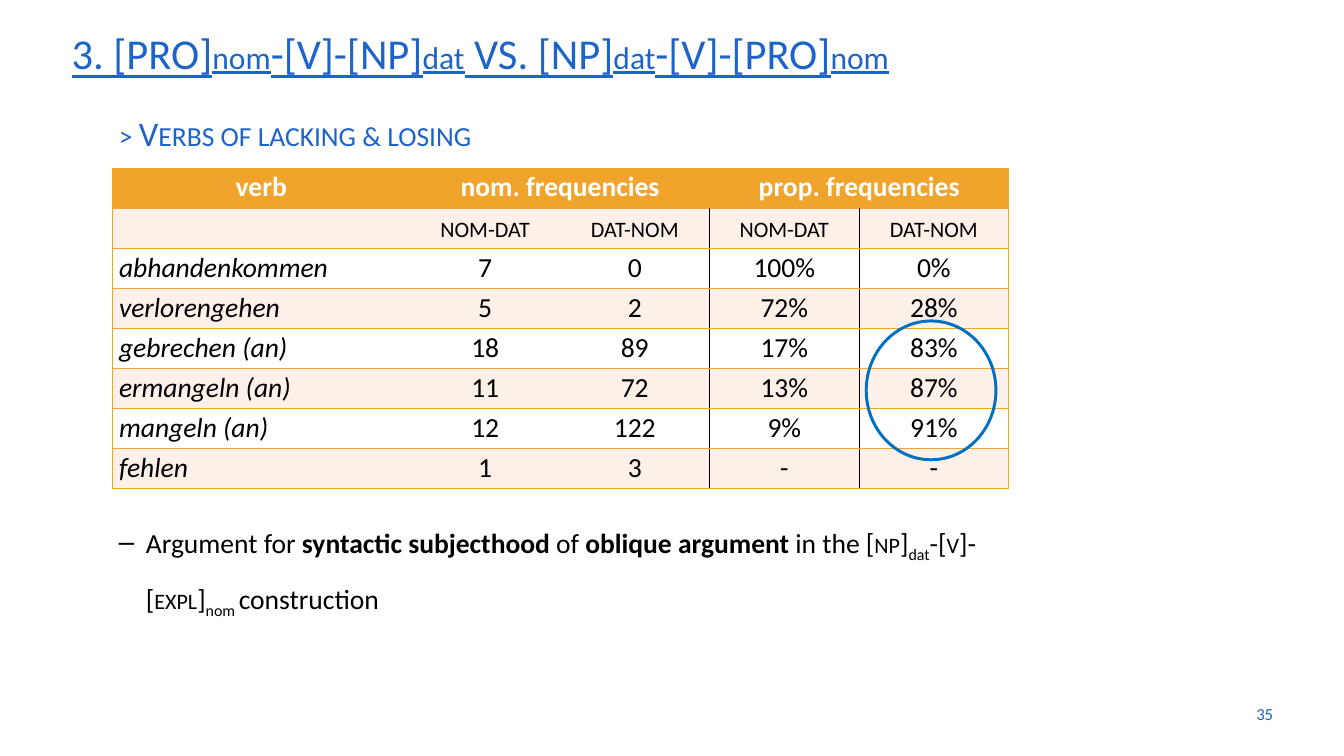
from lxml import etree
from pptx import Presentation
from pptx import util as u
from pptx.dml.color import RGBColor
from pptx.enum import shapes, text
from pptx.oxml.ns import qn

BLUE, ORANGE, PEACH = "1E64C8", "F1A42B", "FCF0E8"
WHITE, BLACK = "FFFFFF", "000000"
rgb = RGBColor.from_string


def add_run(p, content, size=28, color=BLACK, bold=False, italic=False,
            underline=False, small=False, baseline=0):
    r = p.add_run()
    r.text = content
    f = r.font
    f.name, f.size, f.color.rgb = "Calibri", u.Pt(size), rgb(color)
    f.bold, f.italic, f.underline = bold, italic, underline
    if small:
        r._r.get_or_add_rPr().set("cap", "small")
    if baseline:
        r._r.get_or_add_rPr().set("baseline", str(baseline))


def add_border(cell, side, color):
    ln = etree.SubElement(cell._tc.get_or_add_tcPr(), qn(f"a:ln{side}"), w="12700")
    if color:
        fill = etree.SubElement(ln, qn("a:solidFill"))
        etree.SubElement(fill, qn("a:srgbClr"), val=color)
    else:
        etree.SubElement(ln, qn("a:noFill"))


prs = Presentation()
prs.slide_width, prs.slide_height = u.Inches(18.96), u.Inches(10.67)
s = prs.slides.add_slide(prs.slide_layouts[5])

title = s.shapes.title
title.left, title.top = u.Inches(0.91), u.Inches(0.28)
title.width, title.height = u.Inches(17.18), u.Inches(0.94)
tf = title.text_frame
tf.auto_size = text.MSO_AUTO_SIZE.NONE
tf.vertical_anchor = text.MSO_ANCHOR.TOP
p = tf.paragraphs[0]
p.alignment, p.line_spacing = text.PP_ALIGN.LEFT, 0.9
for content, case in [("3. [pro]", "nom"), ("-[v]-[np]", "dat"),
                      (" vs. [np]", "dat"), ("-[v]-[pro]", "nom")]:
    add_run(p, content, 54, BLUE, underline=True, small=True)
    add_run(p, case, 32, BLUE, underline=True)

tf = s.shapes.add_textbox(u.Inches(17.05), u.Inches(9.79), u.Inches(1.01), u.Inches(0.57)).text_frame
tf.word_wrap = True
tf.vertical_anchor = text.MSO_ANCHOR.MIDDLE
p = tf.paragraphs[0]
p.alignment = text.PP_ALIGN.RIGHT
add_run(p, "35", 17.1, BLUE)

tf = s.shapes.add_textbox(u.Inches(1.58), u.Inches(1.42), u.Inches(9.28), u.Inches(0.75)).text_frame
tf.word_wrap = True
p = tf.paragraphs[0]
p.line_spacing = 1.2
add_run(p, "> Verbs of lacking & losing", 35, BLUE, small=True)

rows = [
    ("verb", "nom. frequencies", "", "prop. frequencies", ""),
    ("", "nom-dat", "dat-nom", "nom-dat", "dat-nom"),
    ("abhandenkommen", "7", "0", "100%", "0%"),
    ("verlorengehen", "5", "2", "72%", "28%"),
    ("gebrechen (an)", "18", "89", "17%", "83%"),
    ("ermangeln (an)", "11", "72", "13%", "87%"),
    ("mangeln (an)", "12", "122", "9%", "91%"),
    ("fehlen", "1", "3", "-", "-"),
]
table = s.shapes.add_table(len(rows), 5, u.Inches(1.58), u.Inches(2.37),
                           u.Inches(12.64), u.Inches(4.53)).table
for i, width in enumerate([4.21] + [2.11] * 4):
    table.columns[i].width = u.Inches(width)
for i, row in enumerate(rows):
    for j, content in enumerate(row):
        cell = table.cell(i, j)
        left = ORANGE if j == 0 else BLACK if i and j >= 3 else None
        right = ORANGE if j == 4 else BLACK if i and j >= 2 else None
        for side, color in zip("LRTB", (left, right, ORANGE, ORANGE)):
            add_border(cell, side, color)
        cell.fill.solid()
        cell.fill.fore_color.rgb = rgb(ORANGE if i == 0 else PEACH if i % 2 else WHITE)
        cell.margin_top = cell.margin_bottom = u.Inches(0.04)
        p = cell.text_frame.paragraphs[0]
        if i == 0 or j > 0:
            p.alignment = text.PP_ALIGN.CENTER
        if content:
            add_run(p, content, color=BLACK if i else WHITE, bold=i == 0,
                    italic=i > 1 and j == 0, small=i == 1)
for j in (1, 3):
    table.cell(0, j).merge(table.cell(0, j + 1))

sp = s.shapes.add_shape(shapes.MSO_SHAPE.OVAL, u.Inches(12.22), u.Inches(4.53),
                        u.Inches(1.83), u.Inches(1.96))
sp.shadow.inherit = False
sp.fill.background()
sp.line.color.rgb, sp.line.width = rgb("0070C0"), u.Pt(3)

tf = s.shapes.add_textbox(u.Inches(1.58), u.Inches(7.11), u.Inches(12.64), u.Inches(1.43)).text_frame
tf.word_wrap = True
p = tf.paragraphs[0]
p.line_spacing = 1.5
pPr = p._p.get_or_add_pPr()
pPr.set("marL", str(u.Inches(0.38)))
pPr.set("indent", str(-u.Inches(0.38)))
etree.SubElement(pPr, qn("a:buChar"), char="–")
bold, small, sub = {"bold": True}, {"small": True}, {"baseline": -25000}
for content, fmt in [
    ("Argument for ", {}), ("syntactic subjecthood", bold), (" of ", {}),
    ("oblique argument ", bold), ("in the [", {}), ("np", small), ("]", {}),
    ("dat", sub), ("-[", {}), ("v", small), ("]-[", {}), ("expl", small),
    ("]", {}), ("nom ", sub), ("construction", {}),
]:
    add_run(p, content, **fmt)

prs.save("out.pptx")
